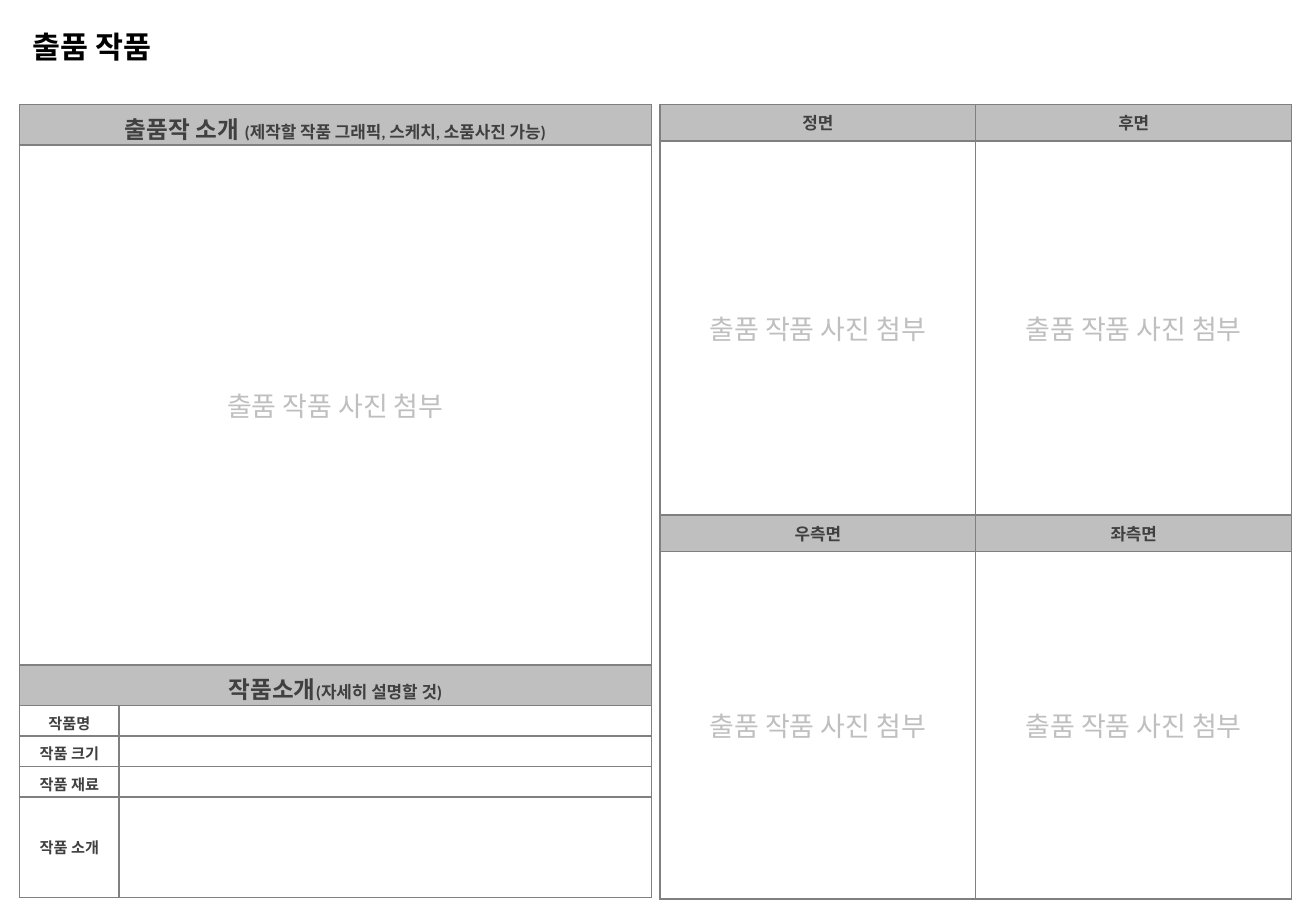
from lxml import etree
from pptx import Presentation
from pptx import util as u
from pptx.dml.color import RGBColor
from pptx.enum import text as t
from pptx.oxml import ns

PHOTO = "출품 작품 사진 첨부"
GREY, DARK, LINE, WHITE = "BFBFBF", "404040", "808080", "FFFFFF"


def color(code):
    return RGBColor.from_string(code)


def write(par, words, size=10, ink=DARK, bold=True, align=t.PP_ALIGN.CENTER):
    par.alignment = align
    run = par.add_run()
    run.text = words
    font = run.font
    font.name, font.size, font.bold = "Calibri", u.Pt(size), bold
    font.color.rgb = color(ink)


def border(cell, code=LINE, width=1):
    """Draw all four sides of a cell; call before setting its fill."""
    props = cell._tc.get_or_add_tcPr()
    for side in ("lnL", "lnR", "lnT", "lnB"):
        line = etree.SubElement(props, ns.qn("a:" + side), w=str(u.Pt(width)))
        fill = etree.SubElement(line, ns.qn("a:solidFill"))
        etree.SubElement(fill, ns.qn("a:srgbClr"), val=code)


class Sheet:
    def __init__(self, width, height):
        self.deck = Presentation()
        self.deck.slide_width = u.Inches(width)
        self.deck.slide_height = u.Inches(height)
        self.slide = self.deck.slides.add_slide(self.deck.slide_layouts[5])

    def title(self, words, *box):
        shape = self.slide.shapes.title
        shape.left, shape.top, shape.width, shape.height = map(u.Inches, box)
        frame = shape.text_frame
        frame.word_wrap = False
        frame.auto_size = t.MSO_AUTO_SIZE.SHAPE_TO_FIT_TEXT
        write(frame.paragraphs[0], words, size=18, ink="000000",
              align=t.PP_ALIGN.LEFT)

    def table(self, left, top, cols, rows):
        """Add a bordered white table from column widths and row heights."""
        box = map(u.Inches, (left, top, sum(cols), sum(rows)))
        grid = self.slide.shapes.add_table(len(rows), len(cols), *box).table
        for col, width in zip(grid.columns, cols):
            col.width = u.Inches(width)
        for row, height in zip(grid.rows, rows):
            row.height = u.Inches(height)
        for cell in grid.iter_cells():
            border(cell)
            self.fill(cell, WHITE)
            cell.vertical_anchor = t.MSO_ANCHOR.MIDDLE
            # The size of an empty cell keeps its row from growing
            par = cell.text_frame.paragraphs[0]
            etree.SubElement(par._p, ns.qn("a:endParaRPr"), sz="900")
        return grid

    def fill(self, cell, code):
        cell.fill.solid()
        cell.fill.fore_color.rgb = color(code)

    def cell(self, cell, words, fill=WHITE, **style):
        self.fill(cell, fill)
        write(cell.text_frame.paragraphs[0], words, **style)

    def photo(self, cell):
        self.cell(cell, PHOTO, size=16, ink=GREY, bold=False)


def intro(sheet):
    grid = sheet.table(0.16, 0.86, [0.82, 4.38],
                       [0.33, 4.28, 0.33, 0.25, 0.25, 0.25, 0.83])
    for row in range(3):
        grid.cell(row, 0).merge(grid.cell(row, 1))
    heads = {0: ("출품작 소개 ", "(제작할 작품 그래픽, 스케치, 소품사진 가능)"),
             2: ("작품소개", "(자세히 설명할 것)")}
    for row, (head, hint) in heads.items():
        cell = grid.cell(row, 0)
        sheet.cell(cell, head, fill=GREY, size=14)
        write(cell.text_frame.paragraphs[0], hint)
        sheet.fill(grid.cell(row, 1), GREY)
    sheet.photo(grid.cell(1, 0))
    labels = ["작품명", "작품 크기", "작품 재료", "작품 소개"]
    for row, label in enumerate(labels, 3):
        sheet.cell(grid.cell(row, 0), label, size=9)


def views(sheet):
    grid = sheet.table(5.43, 0.86, [2.6, 2.6], [0.3, 3.08, 0.3, 2.86])
    sides = [("정면", "후면"), ("우측면", "좌측면")]
    for pair, names in enumerate(sides):
        for col, name in enumerate(names):
            sheet.cell(grid.cell(2 * pair, col), name, fill=GREY)
            sheet.photo(grid.cell(2 * pair + 1, col))


def main():
    sheet = Sheet(10.83, 7.5)
    sheet.title("출품 작품", 0.17, 0.18, 1.27, 0.4)
    intro(sheet)
    views(sheet)
    sheet.deck.save("out.pptx")


if __name__ == "__main__":
    main()
